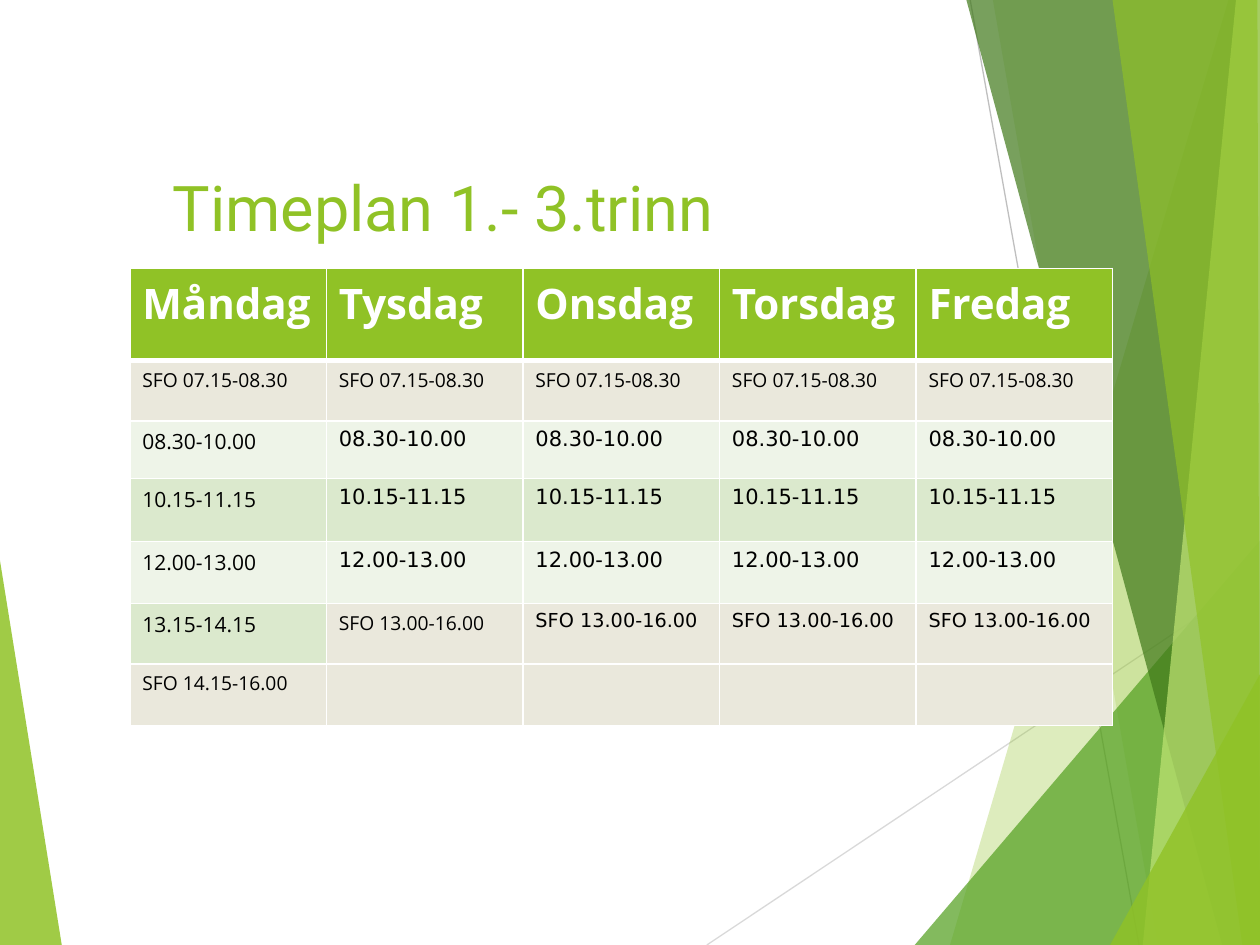
"""Build a weekly school timetable slide with a faceted green backdrop."""
from lxml import etree
from pptx import Presentation
from pptx.dml.color import RGBColor
from pptx.enum.shapes import MSO_CONNECTOR
from pptx.enum.text import MSO_ANCHOR
from pptx.oxml.ns import qn
from pptx.util import Inches, Pt

STRAIGHT = MSO_CONNECTOR.STRAIGHT
BOTTOM, TOP = MSO_ANCHOR.BOTTOM, MSO_ANCHOR.TOP

GREEN = RGBColor(0x90, 0xC2, 0x26)
LEAF = RGBColor(0x54, 0xA0, 0x21)
FOREST = RGBColor(0x3F, 0x78, 0x19)
LIME = RGBColor(0xC0, 0xE4, 0x74)
SAND = RGBColor(0xEA, 0xE8, 0xDC)
PALE = RGBColor(0xEE, 0xF4, 0xE8)
MINT = RGBColor(0xDB, 0xE9, 0xCD)
SILVER = RGBColor(0xD9, 0xD9, 0xD9)
GREY = RGBColor(0xBF, 0xBF, 0xBF)
WHITE = RGBColor(0xFF, 0xFF, 0xFF)
BLACK = RGBColor(0, 0, 0)

WIDTH, HEIGHT = 10, 7.5
TITLE = "Timeplan 1.- 3.trinn"
DAYS = ["Måndag", "Tysdag", "Onsdag", "Torsdag", "Fredag"]
LESSONS = [["08.30-10.00"] * 5, ["10.15-11.15"] * 5, ["12.00-13.00"] * 5]
SCHEDULE = [
    DAYS,
    ["SFO 07.15-08.30"] * 5,
    *LESSONS,
    ["13.15-14.15"] + ["SFO 13.00-16.00"] * 4,
    ["SFO 14.15-16.00"] + [""] * 4,
]
ROW_HEIGHTS = [0.73, 0.48, 0.46, 0.5, 0.49, 0.48, 0.49]
TABLE_LEFT, TABLE_TOP, COLUMN_WIDTH = 1.03, 2.13, 1.56
TUESDAY_SFO = (5, 1)

LEFT_FACET = (GREEN, 85, [(0, 4.45), (0.49, HEIGHT), (0, HEIGHT)])
RAYS = [
    (SILVER, (5.61, HEIGHT), (WIDTH, 4.57)),
    (GREY, (7.7, 0), (9.04, HEIGHT)),
]
RIGHT_FACETS = [
    (GREEN, 30, [(9.75, 0), (7.54, HEIGHT), (WIDTH, HEIGHT), (WIDTH, 0)]),
    (GREEN, 20, [(7.88, 0), (9.19, HEIGHT), (WIDTH, HEIGHT), (WIDTH, 0)]),
    (LEAF, 72, [(7.26, HEIGHT), (WIDTH, 4.29), (WIDTH, HEIGHT)]),
    (FOREST, 70, [(7.67, 0), (9.7, HEIGHT), (WIDTH, HEIGHT), (WIDTH, 0)]),
    (LIME, 70, [(9.81, 0), (9.07, HEIGHT), (WIDTH, HEIGHT), (WIDTH, 0)]),
    (GREEN, 65, [(8.83, 0), (9.86, HEIGHT), (WIDTH, HEIGHT), (9.98, 0)]),
    (GREEN, 80, [(8.81, HEIGHT), (WIDTH, 5.35), (WIDTH, HEIGHT)]),
]


def add_facet(page, color, opacity, points):
    corners = [(Inches(x), Inches(y)) for x, y in points]
    builder = page.shapes.build_freeform(*corners[0])
    builder.add_line_segments(corners[1:], close=True)
    facet = builder.convert_to_shape()
    facet.shadow.inherit = False
    facet.line.fill.background()
    facet.fill.solid()
    facet.fill.fore_color.rgb = color
    tint = facet._element.spPr.find(qn("a:solidFill"))[0]
    etree.SubElement(tint, qn("a:alpha"), val=str(opacity * 1000))


def add_ray(page, color, start, end):
    ray = page.shapes.add_connector(STRAIGHT, *map(Inches, start + end))
    ray.line.color.rgb = color
    ray.line.width = Pt(0.75)
    etree.SubElement(ray._element.spPr, qn("a:effectLst"))


def write(frame, text, color, **formats):
    para = frame.paragraphs[0]
    span = para.add_run() if text else para
    if text:
        span.text = text
    for name, value in formats.items():
        setattr(span.font, name, value)
    span.font.color.rgb = color


def add_title(page):
    box = page.shapes.add_textbox(*map(Inches, (0.67, 0.67, 6.94, 1.44)))
    frame = box.text_frame
    layout = {"word_wrap": True, "vertical_anchor": BOTTOM,
              "margin_left": Inches(0.7), "margin_bottom": Inches(0.17)}
    for name, value in layout.items():
        setattr(frame, name, value)
    write(frame, TITLE, GREEN, name="Roboto", size=Pt(36))


def add_borders(cell, bottom_width):
    properties = cell._tc.get_or_add_tcPr()
    widths = {"lnL": 1, "lnR": 1, "lnT": 1, "lnB": bottom_width}
    for side, width in widths.items():
        edge = etree.SubElement(properties, qn("a:" + side), w=str(Pt(width)))
        fill = etree.SubElement(edge, qn("a:solidFill"))
        etree.SubElement(fill, qn("a:srgbClr"), val=str(WHITE))


def cell_fill(row, text):
    if row == 0:
        return GREEN
    if not text or text.startswith("SFO"):
        return SAND
    return MINT if row % 2 else PALE


def cell_format(row, column, text):
    if row == 0:
        return {"name": "Open Sans", "size": Pt(24), "bold": True}
    open_sans = row == 1 or column == 0 or (row, column) == TUESDAY_SFO
    lesson = text and not text.startswith("SFO")
    return {"name": "Open Sans" if open_sans else "DejaVu Sans",
            "size": Pt(12 if lesson else 11), "bold": False}


def add_timetable(page):
    table = page.shapes.add_table(
        len(SCHEDULE), len(DAYS), Inches(TABLE_LEFT), Inches(TABLE_TOP),
        Inches(COLUMN_WIDTH * len(DAYS)), Inches(sum(ROW_HEIGHTS))).table
    table.horz_banding = False
    for column in table.columns:
        column.width = Inches(COLUMN_WIDTH)
    for row, texts in enumerate(SCHEDULE):
        table.rows[row].height = Inches(ROW_HEIGHTS[row])
        for column, text in enumerate(texts):
            cell = table.cell(row, column)
            cell.vertical_anchor = TOP
            add_borders(cell, 1 if row else 3)
            cell.fill.solid()
            cell.fill.fore_color.rgb = cell_fill(row, text)
            write(cell.text_frame, text, BLACK if row else WHITE,
                  **cell_format(row, column, text))


def main():
    deck = Presentation()
    deck.slide_width, deck.slide_height = Inches(WIDTH), Inches(HEIGHT)
    page = deck.slides.add_slide(deck.slide_layouts[6])
    add_facet(page, *LEFT_FACET)
    for ray in RAYS:
        add_ray(page, *ray)
    for facet in RIGHT_FACETS:
        add_facet(page, *facet)
    add_title(page)
    add_timetable(page)
    deck.save("out.pptx")


if __name__ == "__main__":
    main()
